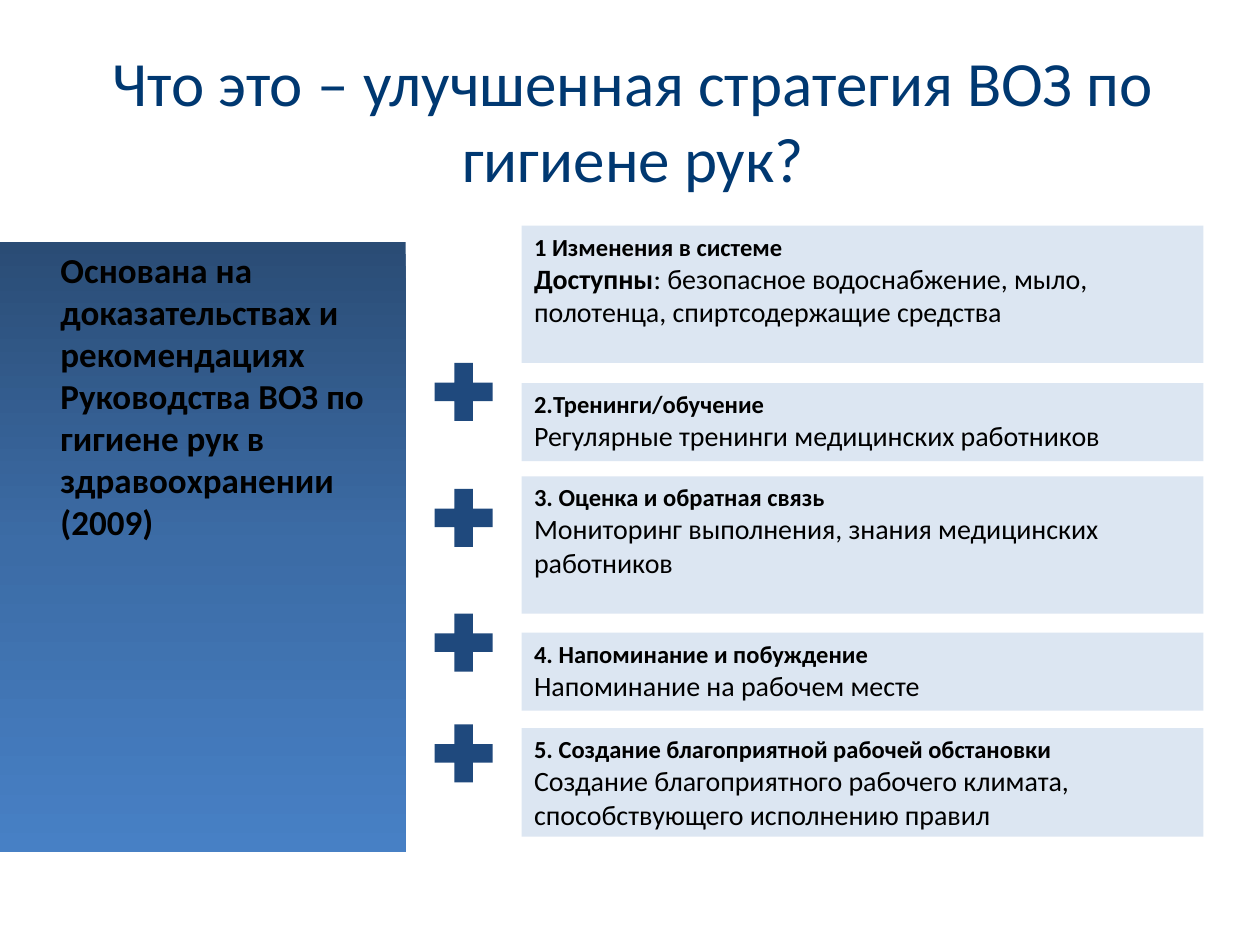
from copy import deepcopy
from dataclasses import dataclass

from pptx import Presentation
from pptx.dml.color import RGBColor
from pptx.enum import shapes, text
from pptx.util import Inches, Pt


@dataclass(frozen=True)
class Theme:
    font: str = "Calibri"
    title: str = "003871"
    ink: str = "000000"
    card: str = "DCE6F2"
    plus: str = "1F497D"
    fade: tuple = ((0, "2A4C75"), (0.5, "3C6CA6"), (1, "4780C5"))
    big: int = 36
    lead: int = 20
    body: int = 16
    head: int = 14


THEME = Theme()

BASIS = ("Основана на доказательствах и рекомендациях Руководства ВОЗ "
         "по гигиене рук в здравоохранении (2009)")

# top, height, heading, bold lead-in, body
STEPS = [
    (1.79, 1.09, "1 Изменения в системе", "Доступны",
     ": безопасное водоснабжение, мыло, полотенца, спиртсодержащие средства"),
    (3.04, 0.62, "2.Тренинги/обучение", "",
     "Регулярные тренинги медицинских работников"),
    (3.78, 1.09, "3. Оценка и обратная связь", "",
     "Мониторинг выполнения, знания медицинских работников"),
    (5.02, 0.62, "4. Напоминание и побуждение", "",
     "Напоминание на рабочем месте"),
    (5.78, 0.86, "5. Создание благоприятной рабочей обстановки", "",
     "Создание благоприятного рабочего климата, способствующего исполнению правил"),
]
PLUS_TOPS = (2.88, 3.88, 4.87, 5.75)


def add_run(para, words, size, color=THEME.ink, bold=False):
    run = para.add_run()
    run.text = words
    font = run.font
    font.name, font.size, font.bold = THEME.font, Pt(size), bold
    font.color.rgb = RGBColor.from_string(color)


def add_block(slide, kind, box, color=None):
    """Add a flat shape without outline, its text at the top left."""
    block = slide.shapes.add_shape(kind, *map(Inches, box))
    block.shadow.inherit = False
    block.line.fill.background()
    if color:
        block.fill.solid()
        block.fill.fore_color.rgb = RGBColor.from_string(color)
    frame = block.text_frame
    frame.word_wrap = True
    frame.vertical_anchor = text.MSO_ANCHOR.TOP
    frame.paragraphs[0].alignment = text.PP_ALIGN.LEFT
    return block


def add_title(slide, box):
    frame = slide.shapes.add_textbox(*map(Inches, box)).text_frame
    frame.word_wrap = True
    frame.vertical_anchor = text.MSO_ANCHOR.MIDDLE
    para = frame.paragraphs[0]
    para.alignment = text.PP_ALIGN.CENTER
    add_run(para, "Что это – улучшенная стратегия ВОЗ по гигиене рук?",
            THEME.big, THEME.title)


def add_fade(fill):
    """Fill from top to bottom with the three theme stops."""
    fill.gradient()
    fill.gradient_angle = 270
    first = fill.gradient_stops[0].color._xFill
    first.addnext(deepcopy(first))
    for stop, (place, color) in zip(fill.gradient_stops, THEME.fade):
        stop.position = place
        stop.color.rgb = RGBColor.from_string(color)


def add_basis(slide, box):
    panel = add_block(slide, shapes.MSO_SHAPE.RECTANGLE, box)
    add_fade(panel.fill)
    panel.text_frame.margin_left = Inches(0.48)
    add_run(panel.text_frame.paragraphs[0], BASIS, THEME.lead, bold=True)


def add_steps(slide, left, width):
    for top, height, head, lead, body in STEPS:
        card = add_block(slide, shapes.MSO_SHAPE.RECTANGLE,
                         (left, top, width, height), THEME.card)
        frame = card.text_frame
        add_run(frame.paragraphs[0], head, THEME.head, bold=True)
        para = frame.add_paragraph()
        para.alignment = text.PP_ALIGN.LEFT
        if lead:
            add_run(para, lead, THEME.body, bold=True)
        add_run(para, body, THEME.body)


def add_pluses(slide, left, side):
    for top in PLUS_TOPS:
        plus = add_block(slide, shapes.MSO_SHAPE.CROSS,
                         (left, top, side, side), THEME.plus)
        plus.adjustments[0] = 0.34


def main():
    deck = Presentation()
    deck.slide_width, deck.slide_height = Inches(10), Inches(7.5)
    slide = deck.slides.add_slide(deck.slide_layouts[6])
    add_basis(slide, (0, 1.92, 3.22, 4.84))
    add_title(slide, (0.5, 0.32, 9.05, 1.25))
    add_steps(slide, 4.14, 5.41)
    add_pluses(slide, 3.45, 0.46)
    deck.save("out.pptx")


if __name__ == "__main__":
    main()
